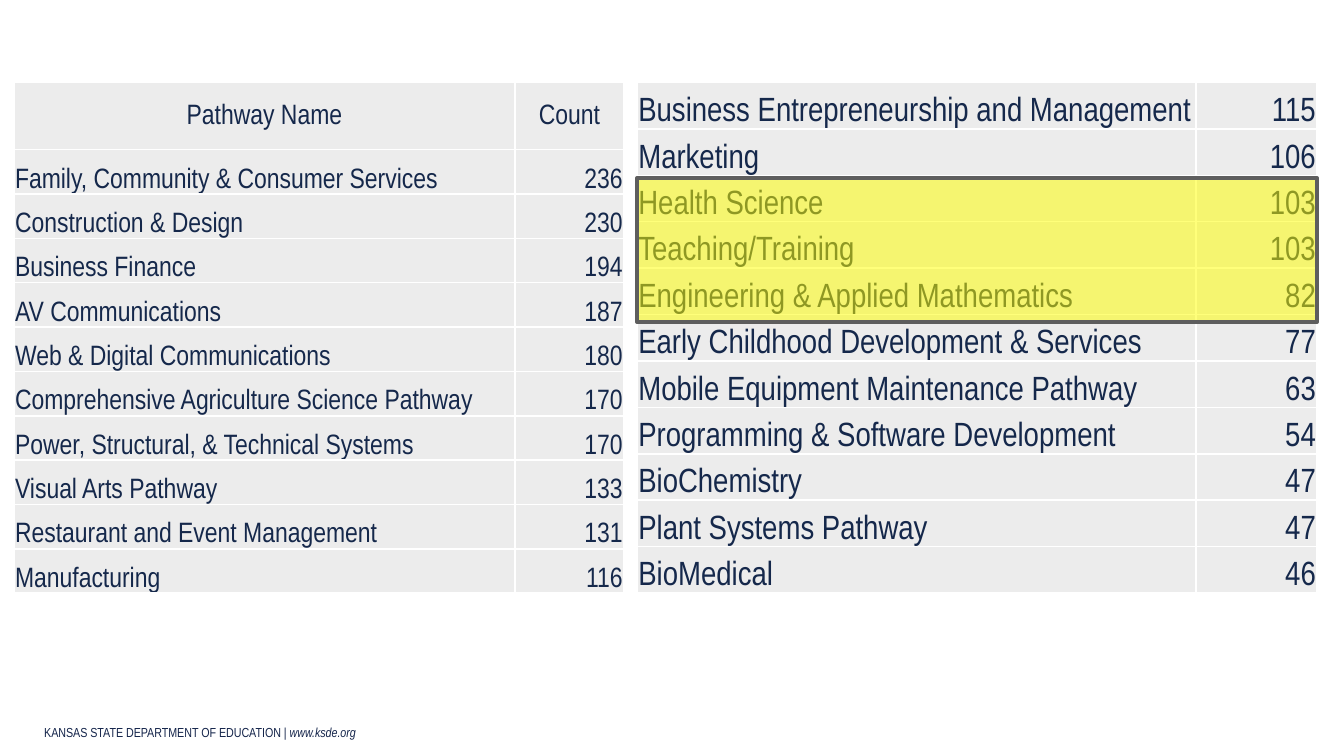
from dataclasses import dataclass

from lxml import etree
from pptx import Presentation
from pptx.dml.color import RGBColor
from pptx.enum.shapes import MSO_SHAPE
from pptx.enum.text import MSO_ANCHOR, PP_ALIGN
from pptx.oxml.ns import qn
from pptx.util import Pt

RECT = MSO_SHAPE.RECTANGLE
MIDDLE, BOTTOM = MSO_ANCHOR.MIDDLE, MSO_ANCHOR.BOTTOM
LEFT, CENTER, RIGHT = PP_ALIGN.LEFT, PP_ALIGN.CENTER, PP_ALIGN.RIGHT

NAVY = RGBColor(0x15, 0x28, 0x4B)
INK = RGBColor(0x15, 0x25, 0x4B)
PALE = RGBColor(0xEC, 0xEC, 0xEC)
WHITE = RGBColor(0xFF, 0xFF, 0xFF)
YELLOW = RGBColor(0xFF, 0xFF, 0x00)
GREY = RGBColor(0x5E, 0x5E, 0x5E)
FACE = "Arial Narrow"

TOP, HIGH = 44.2, 273.6
INSETS = {"margin_left": Pt(0.7), "margin_right": Pt(0.7),
          "margin_top": Pt(0.7), "margin_bottom": Pt(0)}


@dataclass
class Grid:
    left: float
    cols: tuple[float, float]
    size: float
    rows: list[tuple[str, int]]
    head: tuple[str, str] | None = None
    head_high: float = 0


COMMON = Grid(7.4, (268.6, 58.3), 15, [
    ("Family, Community & Consumer Services", 236),
    ("Construction & Design", 230),
    ("Business Finance", 194),
    ("AV Communications", 187),
    ("Web & Digital Communications", 180),
    ("Comprehensive Agriculture Science Pathway", 170),
    ("Power, Structural, & Technical Systems", 170),
    ("Visual Arts Pathway", 133),
    ("Restaurant and Event Management", 131),
    ("Manufacturing", 116),
], ("Pathway Name", "Count"), 36)

OTHERS = Grid(341.3, (299.5, 64.8), 18, [
    ("Business Entrepreneurship and Management", 115),
    ("Marketing", 106),
    ("Health Science", 103),
    ("Teaching/Training", 103),
    ("Engineering & Applied Mathematics", 82),
    ("Early Childhood Development & Services", 77),
    ("Mobile Equipment Maintenance Pathway", 63),
    ("Programming & Software Development", 54),
    ("BioChemistry", 47),
    ("Plant Systems Pathway", 47),
    ("BioMedical", 46),
])


def style(item, values: dict) -> None:
    for name, value in values.items():
        setattr(item, name, value)


def add_edges(cell) -> None:
    props = cell._tc.get_or_add_tcPr()
    for side in "LRTB":
        edge = etree.SubElement(props, qn(f"a:ln{side}"), w=str(Pt(1)))
        fill = etree.SubElement(edge, qn("a:solidFill"))
        etree.SubElement(fill, qn("a:srgbClr"), val=str(WHITE))


def fill_cell(cell, text: str, size: float, align, anchor) -> None:
    style(cell, INSETS | {"vertical_anchor": anchor})
    add_edges(cell)
    cell.fill.solid()
    cell.fill.fore_color.rgb = PALE
    para = cell.text_frame.paragraphs[0]
    para.alignment = align
    run = para.add_run()
    run.text = text
    style(run.font, {"name": FACE, "size": Pt(size), "bold": False})
    run.font.color.rgb = NAVY


def draw_grid(slide, grid: Grid) -> None:
    lines = ([grid.head] if grid.head else []) + grid.rows
    table = slide.shapes.add_table(
        len(lines), 2, Pt(grid.left), Pt(TOP), Pt(sum(grid.cols)), Pt(HIGH)).table
    style(table, {"first_row": False, "horz_banding": False})
    for col, wide in zip(table.columns, grid.cols):
        col.width = Pt(wide)
    step = (HIGH - grid.head_high) / len(grid.rows)
    for i, line in enumerate(lines):
        is_head = line is grid.head
        table.rows[i].height = Pt(grid.head_high if is_head else step)
        aligns = (CENTER, CENTER) if is_head else (LEFT, RIGHT)
        for j, text in enumerate(line):
            fill_cell(table.cell(i, j), str(text), grid.size, aligns[j],
                      MIDDLE if is_head else BOTTOM)


def draw_mark(slide, grid: Grid, first: int, count: int) -> None:
    step = HIGH / len(grid.rows)
    mark = slide.shapes.add_shape(
        RECT, Pt(grid.left), Pt(TOP + first * step + 1.5),
        Pt(sum(grid.cols)), Pt(count * step + 2.5))
    mark.shadow.inherit = False
    mark.fill.solid()
    mark.fill.fore_color.rgb = YELLOW
    color = mark.fill._xPr.find(qn("a:solidFill"))[0]
    etree.SubElement(color, qn("a:alpha"), val="52000")
    mark.line.color.rgb = GREY
    mark.line.width = Pt(2)


def draw_foot(slide) -> None:
    frame = slide.shapes.add_textbox(Pt(16.6), Pt(384.5), Pt(343.4), Pt(15.8)).text_frame
    style(frame, {"word_wrap": True, "vertical_anchor": BOTTOM})
    para = frame.paragraphs[0]
    for text, slant in (("KANSAS STATE DEPARTMENT OF EDUCATION ", False),
                        ("| ", False), ("www.ksde.org", True)):
        run = para.add_run()
        run.text = text
        style(run.font, {"name": FACE, "size": Pt(7), "italic": slant})
        run.font.color.rgb = INK


def main() -> None:
    deck = Presentation()
    style(deck, {"slide_width": Pt(720), "slide_height": Pt(405)})
    slide = deck.slides.add_slide(deck.slide_layouts[6])
    # Footer
    draw_foot(slide)
    # Pathway counts
    for grid in (COMMON, OTHERS):
        draw_grid(slide, grid)
    # Highlight of three pathways
    draw_mark(slide, OTHERS, 2, 3)
    deck.save("out.pptx")


if __name__ == "__main__":
    main()
